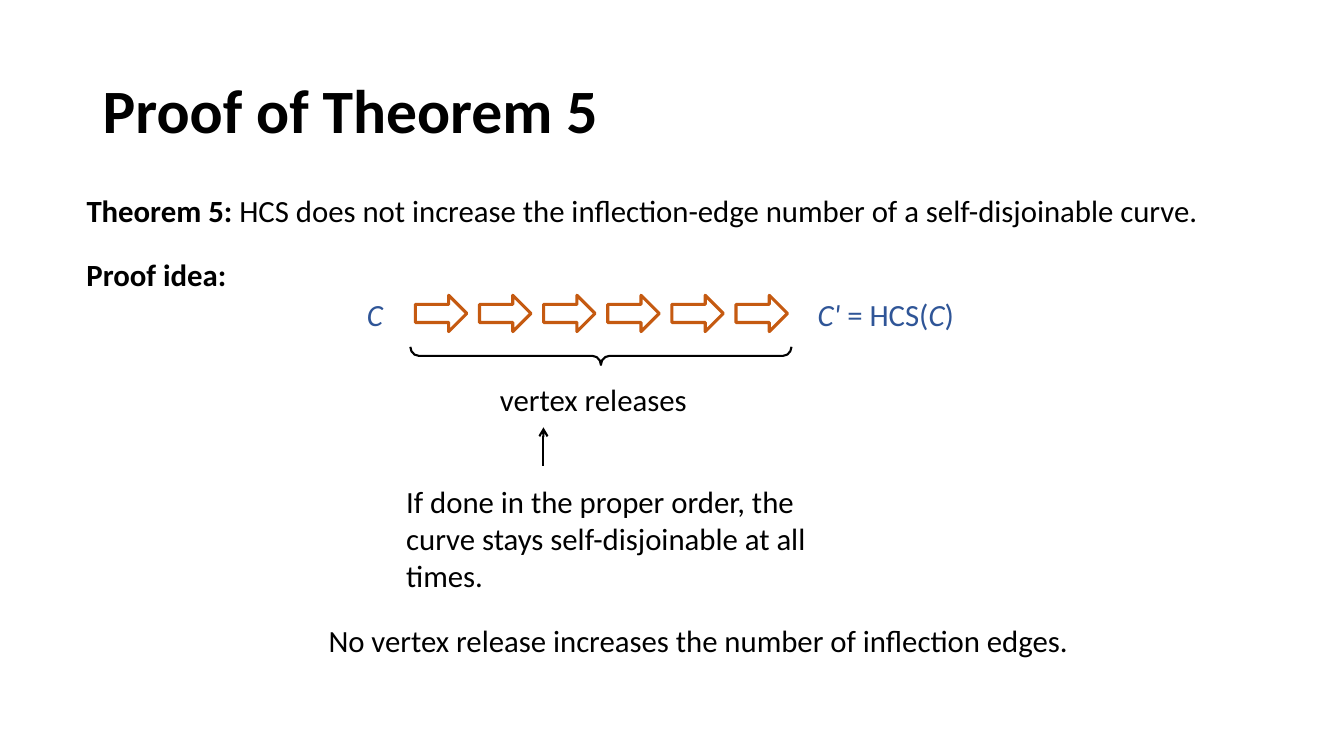
from lxml.etree import SubElement
from pptx import Presentation
from pptx.dml.color import RGBColor
from pptx.enum.shapes import MSO_CONNECTOR as Connector, MSO_SHAPE as Preset
from pptx.enum.text import MSO_ANCHOR as Anchor, MSO_AUTO_SIZE as AutoSize
from pptx.oxml.ns import qn
from pptx.util import Inches, Pt

BLACK = RGBColor(0x00, 0x00, 0x00)
WHITE = RGBColor(0xFF, 0xFF, 0xFF)
BLUE = RGBColor(0x2F, 0x55, 0x97)
ORANGE = RGBColor(0xC5, 0x5A, 0x11)


class ProofSlide:
    font = "Calibri"
    body_size = 22
    line_width = Pt(1.5)
    arrow_width = Pt(2.25)

    def __init__(self, page):
        self.shapes = page.shapes

    def text(self, left, top, width, height, spans, size=body_size, color=BLACK):
        """Add a text box; each span is its wording and its style letters, b or i."""
        box = self.shapes.add_textbox(
            Inches(left), Inches(top), Inches(width), Inches(height))
        frame = box.text_frame
        frame.word_wrap = True
        para = frame.paragraphs[0]
        for wording, style in spans:
            span = para.add_run()
            span.text = wording
            span.font.name = self.font
            span.font.size = Pt(size)
            span.font.color.rgb = color
            span.font.bold = "b" in style
            span.font.italic = "i" in style
        return frame

    def title(self, wording):
        frame = self.text(0.92, 0.4, 11.5, 1.45, [(wording, "b")], size=44)
        frame.vertical_anchor = Anchor.MIDDLE
        frame.paragraphs[0].line_spacing = 0.9

    def label(self, left, top, width, *spans, height=0.47, color=BLACK):
        frame = self.text(left, top, width, height, spans, color=color)
        frame.auto_size = AutoSize.SHAPE_TO_FIT_TEXT

    def block_arrow(self, left, top):
        arrow = self.shapes.add_shape(
            Preset.RIGHT_ARROW, Inches(left), Inches(top), Inches(0.51), Inches(0.36))
        arrow.shadow.inherit = False
        arrow.fill.solid()
        arrow.fill.fore_color.rgb = WHITE
        arrow.line.color.rgb = ORANGE
        arrow.line.width = self.arrow_width

    def brace_below(self, left, top, span, depth):
        """Add a brace whose point faces down, as a left brace turned on its side."""
        brace = self.shapes.add_shape(
            Preset.LEFT_BRACE,
            Inches(left + (span - depth) / 2), Inches(top - (span - depth) / 2),
            Inches(depth), Inches(span))
        brace.rotation = 270
        brace.adjustments[0] = 0.468
        brace.shadow.inherit = False
        brace.fill.background()
        brace.line.color.rgb = BLACK
        brace.line.width = self.line_width

    def up_arrow(self, x, bottom, top):
        arrow = self.shapes.add_connector(
            Connector.STRAIGHT, Inches(x), Inches(bottom), Inches(x), Inches(top))
        arrow.line.color.rgb = BLACK
        arrow.line.width = self.line_width
        SubElement(arrow.line._get_or_add_ln(), qn("a:tailEnd"), type="arrow")
        SubElement(arrow._element.spPr, qn("a:effectLst"))


def main():
    deck = Presentation()
    deck.slide_width, deck.slide_height = Inches(13.33), Inches(7.5)
    slide = ProofSlide(deck.slides.add_slide(deck.slide_layouts[6]))

    slide.title("Proof of Theorem 5")
    slide.label(
        0.76, 1.85, 11.29, ("Theorem 5:", "b"),
        (" HCS does not increase the inflection-edge number of a self-disjoinable curve.", ""))
    slide.label(0.76, 2.49, 1.9, ("Proof idea:", "b"))

    slide.label(3.54, 2.88, 0.68, ("C", "i"), color=BLUE)
    for step in range(6):
        slide.block_arrow(4.12 + 0.636 * step, 2.93)
    slide.label(8.01, 2.88, 1.71, ("C'", "i"), (" = HCS(", ""), ("C", "i"), (")", ""),
                color=BLUE)
    slide.brace_below(4.07, 3.44, span=3.78, depth=0.18)
    slide.label(4.86, 3.73, 2.35, ("vertex releases", ""))

    slide.up_arrow(5.39, bottom=4.62, top=4.24)
    slide.label(
        3.93, 4.74, 4.51,
        ("If done in the proper order, the curve stays self-disjoinable at all times.", ""),
        height=1.21)
    slide.label(3.16, 6.12, 7.81,
                ("No vertex release increases the number of inflection edges.", ""))

    deck.save("out.pptx")


if __name__ == "__main__":
    main()
